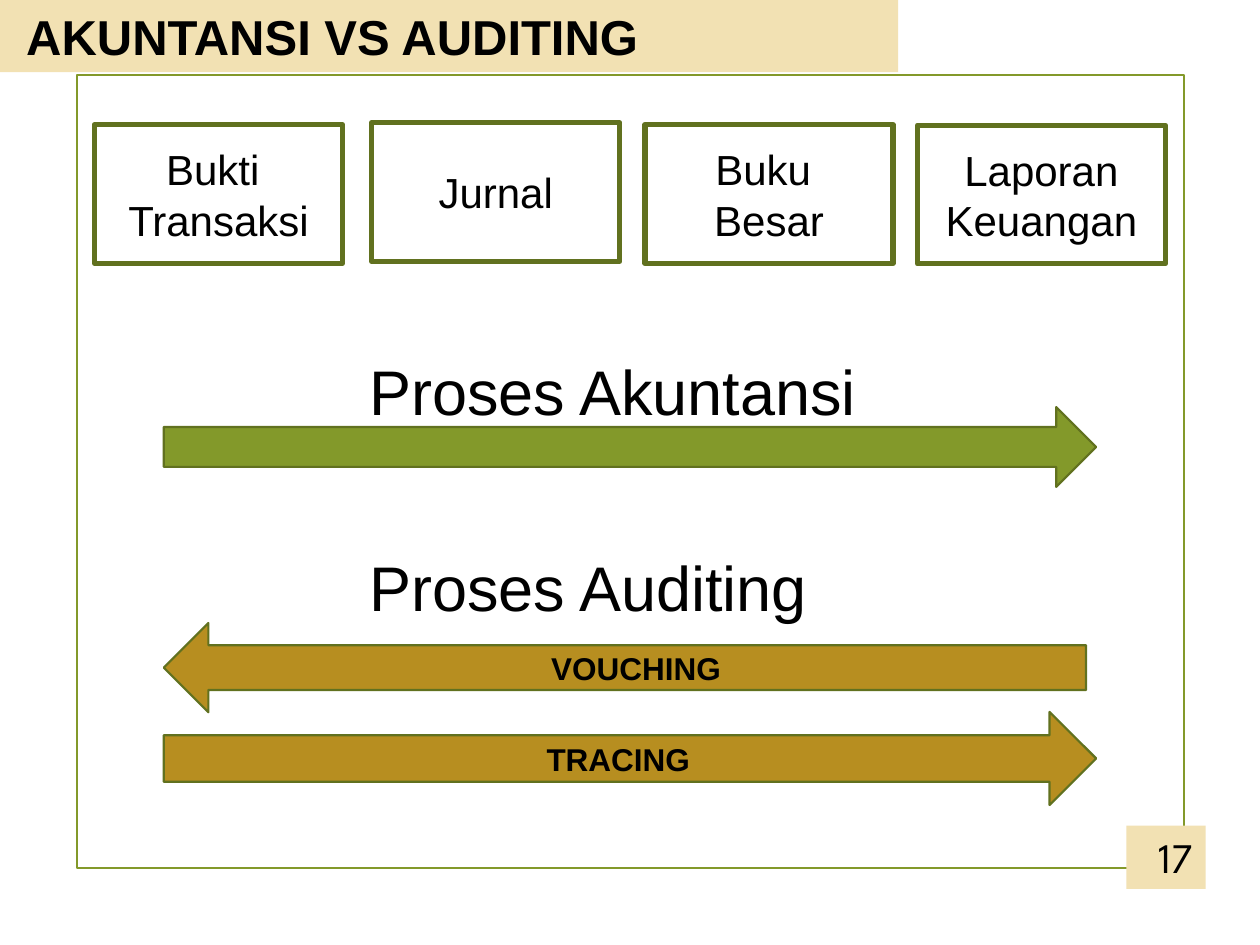
from dataclasses import dataclass
from typing import Optional

from pptx import Presentation
from pptx.dml.color import RGBColor
from pptx.enum.shapes import MSO_SHAPE as Preset
from pptx.enum.text import MSO_ANCHOR as Anchor, PP_ALIGN as Align
from pptx.util import Pt


@dataclass(frozen=True)
class Theme:
    ink: str = "000000"
    sand: str = "F2E1B3"
    green: str = "83992A"
    olive: str = "61711F"
    gold: str = "B78E20"
    body_font: str = "Arial"
    number_font: str = "League Spartan"
    title_size: float = 28
    process_size: float = 36
    step_size: float = 24
    arrow_size: float = 18
    thin: float = 1.25
    thick: float = 3


@dataclass(frozen=True)
class Area:
    left: float
    top: float
    width: float
    height: float

    def lengths(self) -> tuple:
        return tuple(Pt(v) for v in (self.left, self.top, self.width, self.height))


@dataclass(frozen=True)
class Label:
    lines: tuple
    size: float
    bold: bool = False
    font: str = Theme.body_font
    align: Align = Align.CENTER
    anchor: Anchor = Anchor.MIDDLE
    inset: float = 7.2
    wrap: bool = True


@dataclass(frozen=True)
class Block:
    area: Area
    preset: Preset = Preset.RECTANGLE
    fill: Optional[str] = None
    line: Optional[str] = None
    weight: float = Theme.thin
    label: Optional[Label] = None


THEME = Theme()
STEP_WIDTH, STEP_HEIGHT = 141.8, 79.2
STEPS = (
    (54, 71.3, ("Bukti ", "Transaksi")),
    (212.4, 70.2, ("Jurnal",)),
    (368.6, 71.3, ("Buku ", "Besar")),
    (524.2, 71.6, ("Laporan", "Keuangan")),
)
PROCESSES = (
    (Area(203.8, 198, 295, 51), "Proses Akuntansi"),
    (Area(203.8, 309.6, 267, 51), "Proses Auditing"),
)


def write_label(frame, label: Label) -> None:
    frame_format = {
        "word_wrap": label.wrap,
        "vertical_anchor": label.anchor,
        "margin_left": Pt(label.inset),
    }
    for attribute, value in frame_format.items():
        setattr(frame, attribute, value)
    font_format = {"name": label.font, "size": Pt(label.size), "bold": label.bold}
    for index, line in enumerate(label.lines):
        paragraph = frame.paragraphs[0] if index == 0 else frame.add_paragraph()
        paragraph.alignment = label.align
        run = paragraph.add_run()
        run.text = line
        for attribute, value in font_format.items():
            setattr(run.font, attribute, value)
        run.font.color.rgb = RGBColor.from_string(THEME.ink)


def draw_block(slide, block: Block) -> None:
    shape = slide.shapes.add_shape(block.preset, *block.area.lengths())
    shape.shadow.inherit = False
    for paint, color in ((shape.fill, block.fill), (shape.line.fill, block.line)):
        if color:
            paint.solid()
            paint.fore_color.rgb = RGBColor.from_string(color)
        else:
            paint.background()
    if block.line:
        shape.line.width = Pt(block.weight)
    if block.label:
        write_label(shape.text_frame, block.label)


def draw_process_name(slide, area: Area, name: str) -> None:
    box = slide.shapes.add_textbox(*area.lengths())
    write_label(box.text_frame, Label((name,), THEME.process_size, align=Align.LEFT,
                                      anchor=Anchor.TOP, wrap=False))


def process_arrow(area: Area, preset: Preset, fill: str, name: str = "") -> Block:
    label = Label((name,), THEME.arrow_size, bold=True) if name else None
    return Block(area, preset, fill, THEME.olive, label=label)


def main() -> None:
    deck = Presentation()
    deck.slide_width, deck.slide_height = Pt(720), Pt(540)
    slide = deck.slides.add_slide(deck.slide_layouts[6])

    frame = Block(Area(43.8, 42.7, 633, 453.5), line=THEME.green)
    title = Block(Area(0, 0, 513.2, 41.2), fill=THEME.sand,
                  label=Label(("AKUNTANSI VS AUDITING",), THEME.title_size, bold=True,
                              align=Align.LEFT, anchor=Anchor.TOP, inset=15))
    steps = [
        Block(Area(left, top, STEP_WIDTH, STEP_HEIGHT), line=THEME.olive,
              weight=THEME.thick, label=Label(lines, THEME.step_size))
        for left, top, lines in STEPS
    ]
    arrows = [
        process_arrow(Area(93.6, 232.6, 532.8, 45.6), Preset.RIGHT_ARROW, THEME.green),
        process_arrow(Area(93.6, 406.8, 532.8, 53.2), Preset.RIGHT_ARROW, THEME.gold,
                      "TRACING"),
        process_arrow(Area(93.6, 356, 527, 51), Preset.LEFT_ARROW, THEME.gold,
                      "VOUCHING"),
    ]
    page_number = Block(Area(643.6, 471.8, 45.4, 36.2), fill=THEME.sand,
                        label=Label(("17",), THEME.step_size, font=THEME.number_font,
                                    align=Align.RIGHT, anchor=Anchor.TOP))

    for block in (frame, title, *steps, *arrows, page_number):
        draw_block(slide, block)
    for area, name in PROCESSES:
        draw_process_name(slide, area, name)
    deck.save("out.pptx")


if __name__ == "__main__":
    main()
